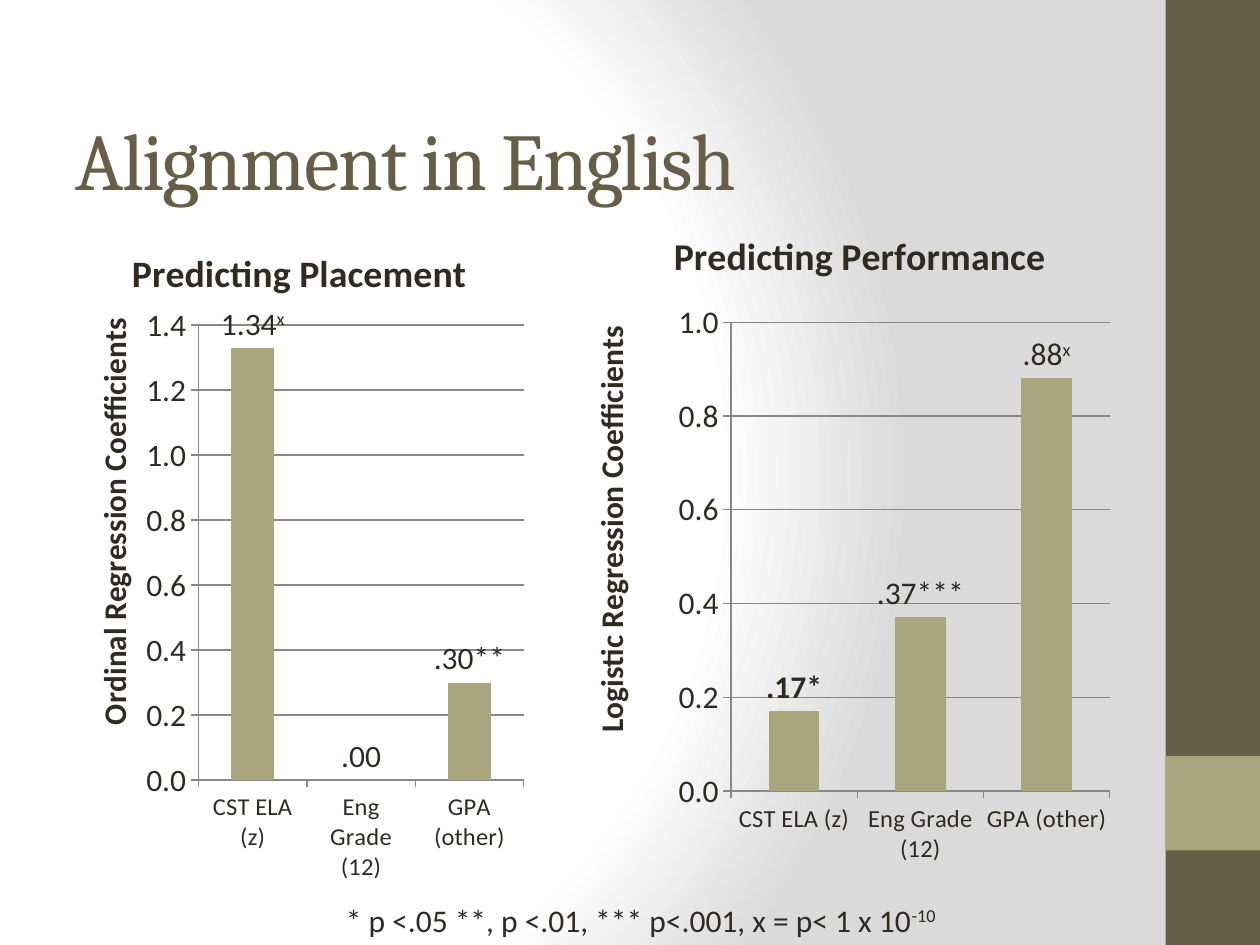
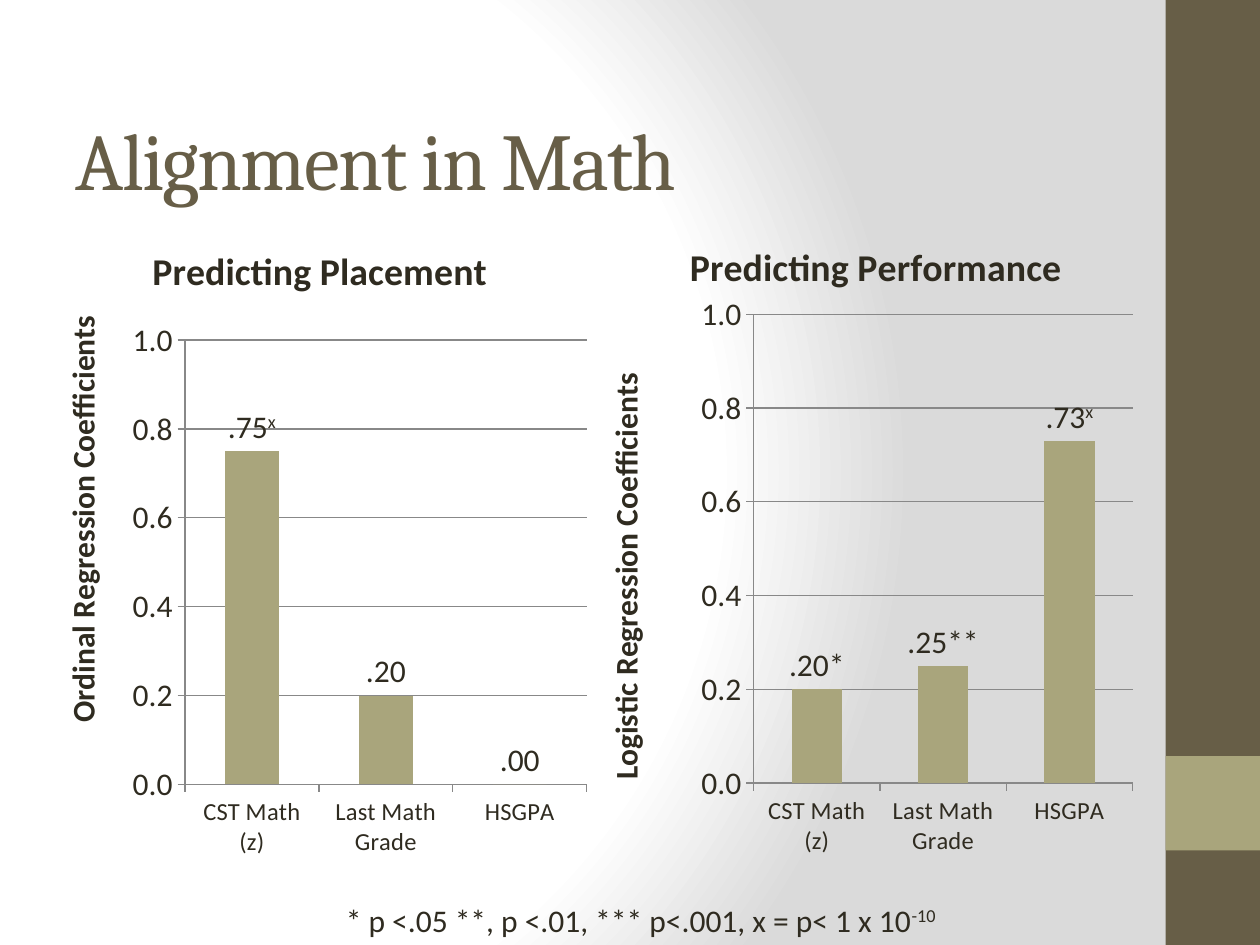
"""Build two slides that compare regression coefficients for English and Math."""
from dataclasses import dataclass

from lxml import etree
from pptx import Presentation
from pptx.chart.data import CategoryChartData
from pptx.dml.color import RGBColor
from pptx.enum.chart import XL_CHART_TYPE, XL_LABEL_POSITION, XL_TICK_LABEL_POSITION, XL_TICK_MARK
from pptx.enum.shapes import MSO_SHAPE
from pptx.enum.text import MSO_ANCHOR, MSO_AUTO_SIZE, PP_ALIGN
from pptx.oxml import parse_xml
from pptx.oxml.ns import nsdecls, qn
from pptx.util import Pt

COLUMNS = XL_CHART_TYPE.COLUMN_CLUSTERED
OUTSIDE_END = XL_LABEL_POSITION.OUTSIDE_END
LABELS_LOW = XL_TICK_LABEL_POSITION.LOW
TICK_OUT, TICK_NONE = XL_TICK_MARK.OUTSIDE, XL_TICK_MARK.NONE
RECTANGLE = MSO_SHAPE.RECTANGLE
MIDDLE = MSO_ANCHOR.MIDDLE
GROW = MSO_AUTO_SIZE.SHAPE_TO_FIT_TEXT
LEFT, CENTER = PP_ALIGN.LEFT, PP_ALIGN.CENTER


@dataclass(frozen=True)
class Theme:
    """Colours, fonts and type sizes shared by the slides."""
    brown: str = "675E47"
    olive: str = "A9A57C"
    ink: str = "2F2B20"
    grid: str = "888888"
    light: str = "FFFFFF"
    shade: str = "DADADA"
    heading_font: str = "Cambria"
    body_font: str = "Calibri"
    heading: float = 46
    chart_title: float = 21.6
    body: float = 18
    category: float = 14


THEME = Theme()
PLACEMENT = ("Predicting Placement", "Ordinal Regression Coefficients")
PERFORMANCE = ("Predicting Performance", "Logistic Regression Coefficients")
WIDE_PLOT = (28.2, 15.1, 68.1, 69.6)
FOOTNOTE = (("* p <.05 **, p <.01, *** p<.001, x = p< 1 x 10", False), ("-10", True))
BANDS = [((666, 0, 54, 540), THEME.brown), ((666, 432, 54, 54), THEME.olive)]
TITLE_BOX = (36, 55.44, 648, 70.56)
FOOTNOTE_BOX = (167.76, 511.2, 396.72, 28.8)

SLIDES = [
    {
        "title": "Alignment in English",
        "categories": ["CST ELA (z)", "Eng Grade (12)", "GPA (other)"],
        "charts": [
            {"titles": PLACEMENT, "box": (42, 126, 258, 378), "top": 1.4,
             "values": [1.33, 0, 0.3],
             "marks": {0: ("1.34", "x", False), 2: (".30**", "", False)},
             "plot": (27.7, 16, 72, 69.6),
             "title_at": (11.4, 3), "axis_title_at": (2.9, 14.8)},
            {"titles": PERFORMANCE, "box": (328, 126, 318, 385), "top": 1,
             "values": [0.17, 0.37, 0.88],
             "marks": {0: (".17*", "", True), 1: (".37***", "", False), 2: (".88", "x", False)},
             "plot": WIDE_PLOT,
             "title_at": (16.7, 0.2), "axis_title_at": (1.7, 14.8)},
        ],
    },
    {
        "title": "Alignment in Math",
        "categories": ["CST Math (z)", "Last Math Grade", "HSGPA"],
        "charts": [
            {"titles": PLACEMENT, "box": (24, 124.5, 318, 373.5), "top": 1,
             "values": [0.75, 0.2, 0],
             "marks": {0: (".75", "x", False)},
             "plot": (25.7, 18.7, 72.2, 68),
             "title_at": (18.6, 3), "axis_title_at": (2.3, 14.1)},
            {"titles": PERFORMANCE, "box": (341, 121.5, 318, 385), "top": 1,
             "values": [0.2, 0.25, 0.73],
             "marks": {0: (".20*", "", False), 1: (".25**", "", False), 2: (".73", "x", False)},
             "plot": WIDE_PLOT,
             "title_at": (15.5, 3.1), "axis_title_at": (0.2, 23)},
        ],
    },
]


def points(box):
    """Turn plain numbers into point lengths."""
    return [Pt(length) for length in box]


def style_font(font, size, color=THEME.ink, name=THEME.body_font, bold=False):
    """Set the size, colour, typeface and weight of a font."""
    font.size, font.name, font.bold = Pt(size), name, bold
    font.color.rgb = RGBColor.from_string(color)


def add_span(para, text, size, raised=False, **style):
    """Add one formatted run, raised when it is a superscript."""
    span = para.add_run()
    span.text = text
    style_font(span.font, size, **style)
    if raised:
        span.font._element.set("baseline", "30000")
    return span


def set_layout(parent, index, percents):
    """Place a chart part by percentages of the chart area."""
    for old in parent.findall(qn("c:layout")):
        parent.remove(old)
    layout = parse_xml(f"<c:layout {nsdecls('c')}><c:manualLayout/></c:layout>")
    fractions = [round(percent / 100, 3) for percent in percents]
    settings = [("xMode", "edge"), ("yMode", "edge"), *zip("xywh", fractions)]
    if len(fractions) == 4:
        settings.insert(0, ("layoutTarget", "inner"))
    for name, value in settings:
        etree.SubElement(layout[0], qn(f"c:{name}")).set("val", str(value))
    parent.insert(index, layout)


def write_chart_title(title, text, size, place):
    """Write a bold chart or axis title and place it."""
    add_span(title.text_frame.paragraphs[0], text, size, bold=True)
    set_layout(title.element, 1, place)


def style_axes(chart, spec):
    """Format both axes, the gridlines and the value axis title."""
    category, value = chart.category_axis, chart.value_axis
    for axis in (category, value):
        axis.major_tick_mark, axis.minor_tick_mark = TICK_OUT, TICK_NONE
    category.tick_label_position = LABELS_LOW
    style_font(category.tick_labels.font, THEME.category)
    value.minimum_scale, value.maximum_scale, value.major_unit = 0, spec["top"], 0.2
    value.tick_labels.number_format = "0.0"
    value.tick_labels.number_format_is_linked = False
    value.has_major_gridlines = True
    for part in (category, value, value.major_gridlines):
        part.format.line.color.rgb = RGBColor.from_string(THEME.grid)
        part.format.line.width = Pt(0.75)
    write_chart_title(value.axis_title, spec["titles"][1], THEME.body, spec["axis_title_at"])
    body = value.axis_title.element.find(f".//{qn('a:bodyPr')}")
    body.set("rot", "-5400000")
    body.set("vert", "horz")


def label_columns(series, marks):
    """Show values above the columns, with significance marks where given."""
    labels = series.data_labels
    labels.show_value, labels.position = True, OUTSIDE_END
    labels.number_format, labels.number_format_is_linked = ".00", False
    style_font(labels.font, THEME.body)
    for index, (text, power, bold) in marks.items():
        label = series.points[index].data_label
        para = label.text_frame.paragraphs[0]
        add_span(para, text, THEME.body, bold=bold)
        if power:
            add_span(para, power, THEME.body, raised=True)
        label.position = OUTSIDE_END


def clear_backgrounds(chart):
    """Let the slide show through the chart and its plot area."""
    clear = f"<c:spPr {nsdecls('c', 'a')}><a:noFill/><a:ln><a:noFill/></a:ln></c:spPr>"
    area = chart.element.find(qn("c:chart"))
    area.addnext(parse_xml(clear))
    plot_area = area.find(qn("c:plotArea"))
    plot_area.append(parse_xml(clear))
    return plot_area


def add_coefficients(page, categories, spec):
    """Add one column chart of regression coefficients."""
    data = CategoryChartData()
    data.categories = categories
    data.add_series("Series 1", spec["values"])
    chart = page.shapes.add_chart(COLUMNS, *points(spec["box"]), data).chart
    style_font(chart.font, THEME.body)
    chart.has_legend = False
    write_chart_title(chart.chart_title, spec["titles"][0], THEME.chart_title, spec["title_at"])
    plot = chart.plots[0]
    plot.gap_width, plot.vary_by_categories = 150, False
    series = plot.series[0]
    series.format.fill.solid()
    series.format.fill.fore_color.rgb = RGBColor.from_string(THEME.olive)
    style_axes(chart, spec)
    label_columns(series, spec["marks"])
    set_layout(clear_backgrounds(chart), 0, spec["plot"])


def write_title(page, text):
    """Move the title placeholder and write the slide title."""
    box = page.shapes.title
    box.left, box.top, box.width, box.height = points(TITLE_BOX)
    box.text_frame.vertical_anchor = MIDDLE
    para = box.text_frame.paragraphs[0]
    para.alignment = LEFT
    span = add_span(para, text, THEME.heading, color=THEME.brown, name=THEME.heading_font)
    span.font._element.set("spc", "-100")


def write_footnote(page):
    """Add the key to the significance marks."""
    frame = page.shapes.add_textbox(*points(FOOTNOTE_BOX)).text_frame
    frame.word_wrap, frame.auto_size = False, GROW
    para = frame.paragraphs[0]
    para.alignment = CENTER
    for text, raised in FOOTNOTE:
        add_span(para, text, THEME.body, raised)


def dress_master(deck, page):
    """Give the master its gradient background and side bands."""
    master = deck.slide_master
    master.background.fill.solid()
    stops = [(0, THEME.light), (75, THEME.light), (100, THEME.shade)]
    stop_xml = "".join(f'<a:gs pos="{place * 1000}"><a:srgbClr val="{color}"/></a:gs>'
                       for place, color in stops)
    gradient = parse_xml(
        f'<a:gradFill {nsdecls("a")} rotWithShape="1"><a:gsLst>{stop_xml}</a:gsLst>'
        '<a:path path="circle"><a:fillToRect l="20000" t="50000" r="100000" b="50000"/>'
        '</a:path></a:gradFill>')
    solid = master.element.find(f".//{qn('p:bgPr')}/{qn('a:solidFill')}")
    solid.getparent().replace(solid, gradient)
    tree = master.element.find(f".//{qn('p:spTree')}")
    for index, (box, color) in enumerate(BANDS):
        band = page.shapes.add_shape(RECTANGLE, *points(box))
        band.shadow.inherit = False
        band.fill.solid()
        band.fill.fore_color.rgb = RGBColor.from_string(color)
        band.line.fill.background()
        band.element.find(f".//{qn('p:cNvPr')}").set("id", str(20 + index))
        tree.insert(2 + index, band.element)


def main():
    """Build and save the deck."""
    deck = Presentation()
    deck.slide_width, deck.slide_height = Pt(720), Pt(540)
    pages = [deck.slides.add_slide(deck.slide_layouts[5]) for _ in SLIDES]
    dress_master(deck, pages[0])
    for page, content in zip(pages, SLIDES):
        write_title(page, content["title"])
        for spec in content["charts"]:
            add_coefficients(page, content["categories"], spec)
        write_footnote(page)
    deck.save("out.pptx")


if __name__ == "__main__":
    main()
